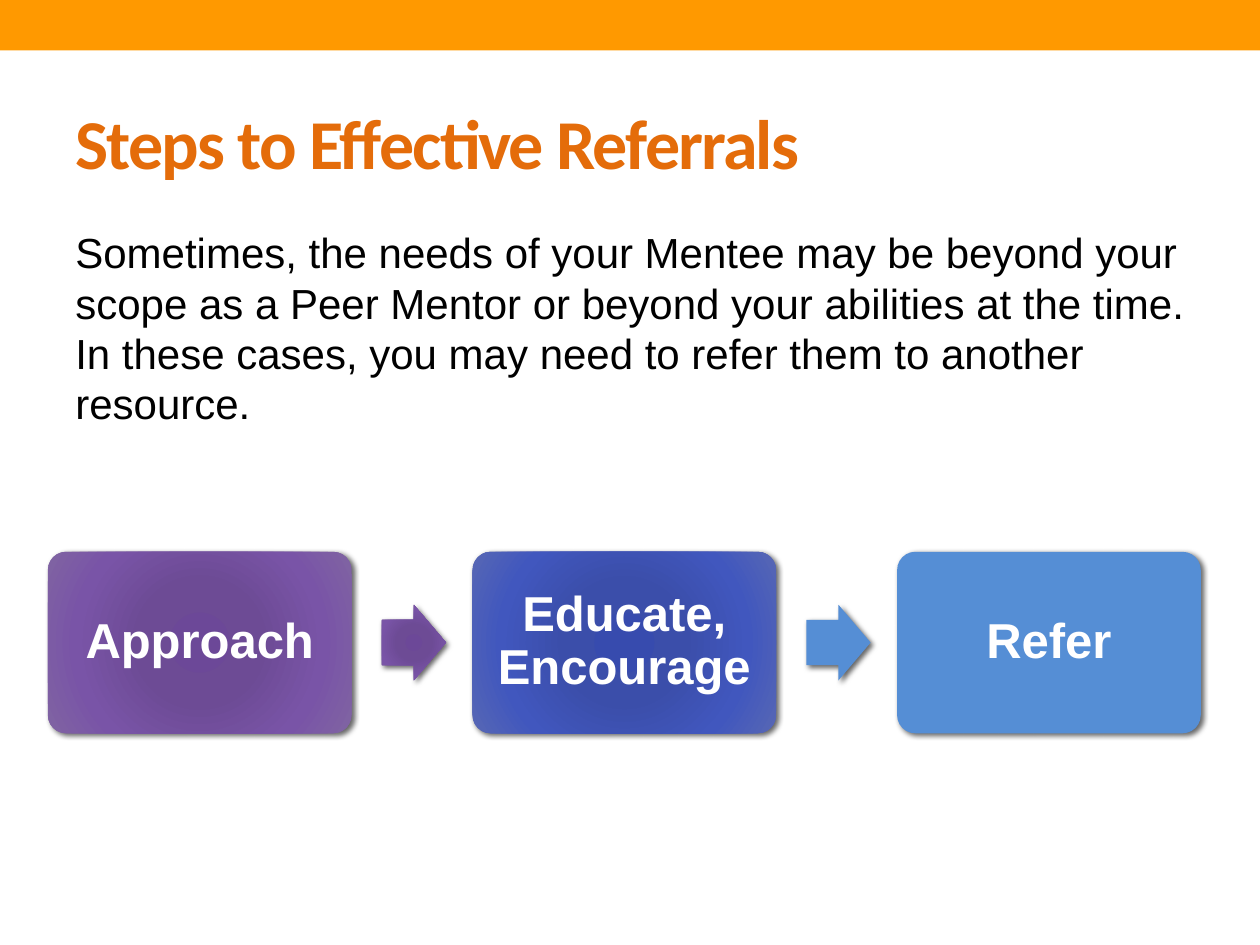
import pptx
import pptx.util
import pptx.dml.color
import pptx.enum.shapes
import pptx.enum.text
import pptx.oxml
import pptx.oxml.ns

Inches = pptx.util.Inches
Pt = pptx.util.Pt
SHAPES = pptx.enum.shapes.MSO_SHAPE
ANCHOR = pptx.enum.text.MSO_ANCHOR
ALIGN = pptx.enum.text.PP_ALIGN

COLORS = {"banner": "FF9900", "title": "E46C0A", "body": "000000",
          "label": "FFFFFF", "shadow": "000000", "blue": "558ED5"}
PURPLE = [(0, "6C4898"), (34, "6D4B95"), (70, "7954A7"), (100, "8064A2")]
INDIGO = [(0, "374BAE"), (34, "3B4EAA"), (70, "4157BE"), (100, "5767B4")]

TITLE = "Steps to Effective Referrals"
BODY = ("Sometimes, the needs of your Mentee may be beyond your scope as a Peer Mentor "
        "or beyond your abilities at the time. In these cases, you may need to refer "
        "them to another resource.")
STEPS = [("Approach", PURPLE), ("Educate, Encourage", INDIGO), ("Refer", COLORS["blue"])]
ARROWS = [PURPLE, COLORS["blue"]]

STEP_LEFT, STEP_PITCH = 0.38, 3.37
STEP_W, STEP_H = 2.41, 1.44
ARROW_W, ARROW_H, ARROW_OFFSET = 0.51, 0.6, 2.65
MIDDLE = 5.1


def write(shape, text, size, color, font="Arial", bold=False, anchor=ANCHOR.TOP,
          align=ALIGN.LEFT, margin=None, line_spacing=None, before=0, tracking=None):
    frame = shape.text_frame
    frame.word_wrap = True
    frame.vertical_anchor = anchor
    if margin is not None:
        frame.margin_left = frame.margin_right = Inches(margin)
        frame.margin_top = frame.margin_bottom = Inches(margin)
    paragraph = frame.paragraphs[0]
    paragraph.alignment = align
    paragraph.space_before = Pt(before)
    if line_spacing:
        paragraph.line_spacing = line_spacing
    run = paragraph.add_run()
    run.text = text
    run.font.name = font
    run.font.size = Pt(size)
    run.font.bold = bold
    run.font.color.rgb = pptx.dml.color.RGBColor.from_string(color)
    if tracking is not None:
        run.font._element.set("spc", str(tracking * 100))


def add_block(slide, preset, left, top, width, height, fill):
    block = slide.shapes.add_shape(preset, Inches(left), Inches(top),
                                   Inches(width), Inches(height))
    block.shadow.inherit = False
    block.line.fill.background()
    block.fill.solid()
    if isinstance(fill, str):
        block.fill.fore_color.rgb = pptx.dml.color.RGBColor.from_string(fill)
    else:
        fill_radially(block, fill)
    return block


def fill_radially(block, stops):
    stop_xml = "".join(f'<a:gs pos="{position * 1000}"><a:srgbClr val="{color}"/></a:gs>'
                       for position, color in stops)
    gradient = pptx.oxml.parse_xml(
        f'<a:gradFill {pptx.oxml.ns.nsdecls("a")} rotWithShape="1">'
        f'<a:gsLst>{stop_xml}</a:gsLst><a:path path="circle">'
        '<a:fillToRect l="100000" t="100000" r="100000" b="100000"/>'
        '</a:path></a:gradFill>')
    properties = block._element.spPr
    properties.replace(properties.find(pptx.oxml.ns.qn("a:solidFill")), gradient)


def cast_shadow(block):
    shadow = pptx.oxml.parse_xml(
        f'<a:outerShdw {pptx.oxml.ns.nsdecls("a")} blurRad="{Pt(3)}" dist="{Pt(2)}" '
        f'dir="2700000" algn="tl" rotWithShape="0"><a:srgbClr val="{COLORS["shadow"]}">'
        '<a:alpha val="60000"/></a:srgbClr></a:outerShdw>')
    block._element.spPr.find(pptx.oxml.ns.qn("a:effectLst")).append(shadow)


def add_step(slide, index, label, fill):
    step = add_block(slide, SHAPES.ROUNDED_RECTANGLE, STEP_LEFT + index * STEP_PITCH,
                     MIDDLE - STEP_H / 2, STEP_W, STEP_H, fill)
    step.adjustments[0] = 0.1
    cast_shadow(step)
    write(step, label, 28, COLORS["label"], bold=True, anchor=ANCHOR.MIDDLE,
          align=ALIGN.CENTER, margin=0.12, line_spacing=0.9)


def add_arrow(slide, index, fill):
    arrow = add_block(slide, SHAPES.RIGHT_ARROW,
                      STEP_LEFT + index * STEP_PITCH + ARROW_OFFSET,
                      MIDDLE - ARROW_H / 2, ARROW_W, ARROW_H, fill)
    arrow.adjustments[0] = 0.6
    arrow.adjustments[1] = 0.5
    cast_shadow(arrow)


def main():
    deck = pptx.Presentation()
    deck.slide_width, deck.slide_height = Inches(10), Inches(7.5)
    slide = deck.slides.add_slide(deck.slide_layouts[6])

    add_block(slide, SHAPES.RECTANGLE, 0, 0, 10, 0.4, COLORS["banner"])
    title = slide.shapes.add_textbox(Inches(0.5), Inches(0.58), Inches(9), Inches(1.08))
    write(title, TITLE, 40, COLORS["title"], font="Calibri", bold=True,
          anchor=ANCHOR.MIDDLE, tracking=-1)
    body = slide.shapes.add_textbox(Inches(0.5), Inches(1.75), Inches(9), Inches(5.33))
    write(body, BODY, 24, COLORS["body"], before=4.8)

    for index, (label, fill) in enumerate(STEPS):
        add_step(slide, index, label, fill)
    for index, fill in enumerate(ARROWS):
        add_arrow(slide, index, fill)

    deck.save("out.pptx")


if __name__ == "__main__":
    main()
